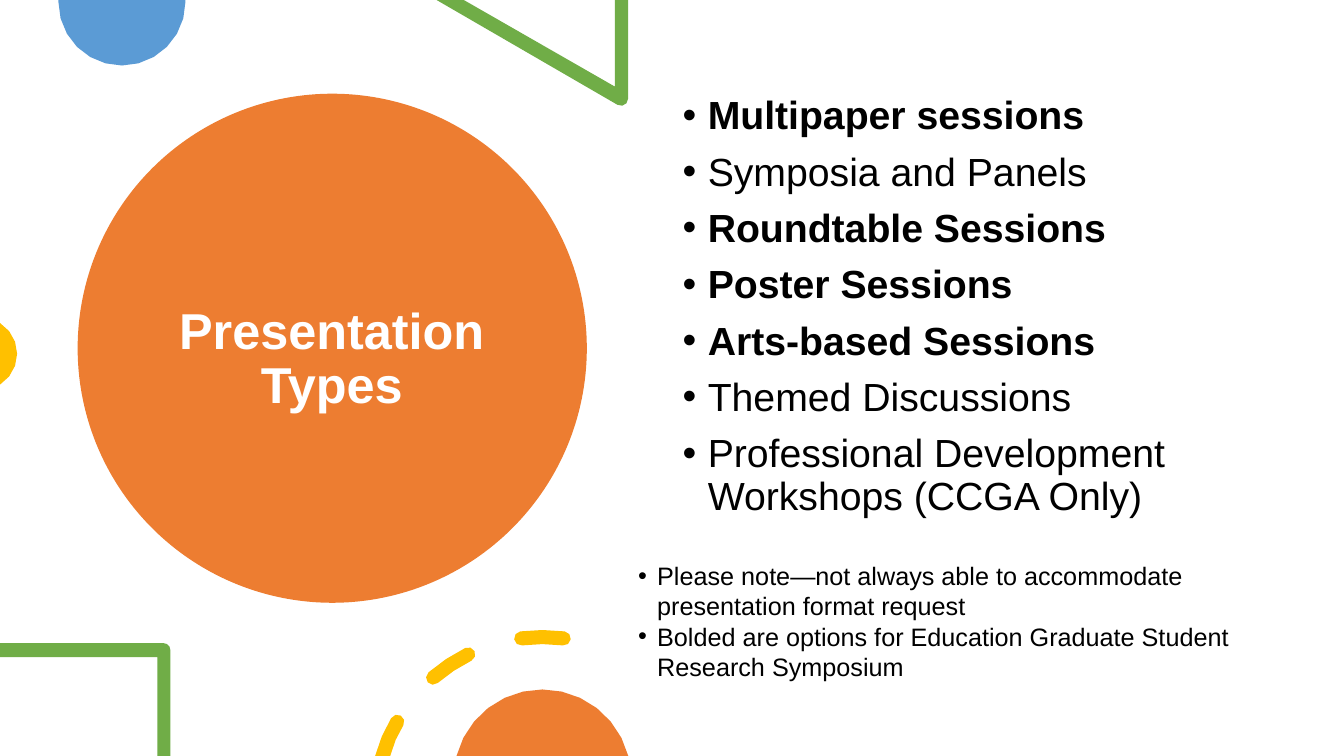
from math import cos, radians, sin

from lxml import etree
from pptx import Presentation
from pptx.dml.color import RGBColor
from pptx.enum.shapes import MSO_SHAPE
from pptx.enum.text import MSO_ANCHOR, MSO_AUTO_SIZE, PP_ALIGN
from pptx.oxml.ns import qn
from pptx.util import Inches, Pt

COLORS = {
    "orange": "ED7D31",
    "blue": "5B9BD5",
    "green": "70AD47",
    "yellow": "FFC000",
    "white": "FFFFFF",
    "black": "000000",
}
COLUMNS, ROWS = 13.33, 7.5
CELL = Inches(1)

deck = Presentation()
deck.slide_width, deck.slide_height = int(COLUMNS * CELL), int(ROWS * CELL)
slide = deck.slides.add_slide(deck.slide_layouts[1])
heading, session_list = slide.placeholders


def arc(column, row, radius, start, end, steps):
    angles = [radians(start + (end - start) * i / steps) for i in range(steps + 1)]
    return [(column + radius * cos(a), row + radius * sin(a)) for a in angles]


def write(frame, entries, size, color, layout, indent=0):
    frame.word_wrap = True
    for number, (wording, bold) in enumerate(entries):
        line = frame.paragraphs[0] if number == 0 else frame.add_paragraph()
        for attribute, value in layout.items():
            setattr(line, attribute, value)
        run = line.add_run()
        run.text = wording
        run.font.color.rgb = RGBColor.from_string(COLORS[color])
        for attribute, value in {"name": "Arial", "size": Pt(size), "bold": bold}.items():
            setattr(run.font, attribute, value)
        if indent:
            properties = line._p.get_or_add_pPr()
            properties.set("marL", str(Inches(indent)))
            properties.set("indent", str(-Inches(indent)))
            etree.SubElement(properties, qn("a:buFont")).set("typeface", "Arial")
            etree.SubElement(properties, qn("a:buChar")).set("char", "•")


disc = slide.shapes.add_shape(
    MSO_SHAPE.OVAL, *[int(n * CELL) for n in (0.77, 0.93, 5.05, 5.05)]
)
heading.element.addprevious(disc.element)
disc.shadow.inherit = False
disc.fill.solid()
disc.fill.fore_color.rgb = RGBColor.from_string(COLORS["orange"])
disc.line.fill.background()

ring, ring_radius, half_width = (5.38, 7.98), 1.66, 0.07
inner, outer = ring_radius - half_width, ring_radius + half_width
dashes = [[
    (3.72, ROWS),
    *arc(*ring, outer, 196.1, 209.8, 2)[1:2],
    *arc(3.94, 7.16, half_width, 209.8, 389.8, 4),
    *arc(*ring, inner, 197.6, 209.8, 2)[1:2],
    (3.87, ROWS),
]]
for start, end in [(229.2, 243.7), (262.7, 277.3)]:
    tail, tip = arc(*ring, ring_radius, start, end, 1)
    dashes.append([
        *arc(*tail, half_width, start + 180, start + 360, 4),
        *arc(*ring, outer, start, end, 2)[1:2],
        *arc(*tip, half_width, end, end + 180, 4),
        *arc(*ring, inner, start, end, 2)[1:2],
    ])

ornaments = [
    ("blue", [[(1.84, 0), *arc(1.21, 0.02, 0.63, 0, 180, 12), (0.58, 0)]]),
    ("green", [[(6.23, 0), (6.1, 0), (6.1, 0.86), (4.6, 0), (4.33, 0),
                *arc(6.16, 0.98, 0.07, 120, 0, 3)]]),
    ("yellow", [arc(-0.19, 3.51, 0.36, -58, 58, 6)]),
    ("green", [[(0, 6.38), *arc(1.62, 6.45, 0.07, 270, 360, 3), (1.69, ROWS),
                (1.56, ROWS), (1.56, 6.52), (0, 6.52)]]),
    ("yellow", dashes),
    ("orange", [arc(5.38, 7.72, 0.88, 194.5, 345.5, 12)]),
]
for number, (color, outlines) in enumerate(ornaments):
    contours = [[(int(x * CELL), int(y * CELL)) for x, y in outline] for outline in outlines]
    builder = slide.shapes.build_freeform(*contours[0][0])
    for contour in contours:
        if contour is not contours[0]:
            builder.move_to(*contour[0])
        builder.add_line_segments(contour[1:], close=True)
    ornament = builder.convert_to_shape()
    ornament.shadow.inherit = False
    ornament.fill.solid()
    ornament.fill.fore_color.rgb = RGBColor.from_string(COLORS[color])
    ornament.line.fill.background()
    if number < 3:
        session_list.element.addprevious(ornament.element)

notice = slide.shapes.add_textbox(0, 0, CELL, CELL)
for holder, area, anchor in [
    (heading, (1.52, 1.35, 3.54, 4.45), MSO_ANCHOR.MIDDLE),
    (session_list, (6.67, 0.9, 5.75, 5.35), MSO_ANCHOR.TOP),
    (notice, (6.23, 5.51, 6.93, 1.31), MSO_ANCHOR.TOP),
]:
    for side, length in zip(("left", "top", "width", "height"), area):
        setattr(holder, side, int(length * CELL))
    holder.text_frame.auto_size = MSO_AUTO_SIZE.NONE
    holder.text_frame.vertical_anchor = anchor
notice.text_frame.auto_size = MSO_AUTO_SIZE.SHAPE_TO_FIT_TEXT

write(heading.text_frame, [("Presentation Types", True)], 36, "white",
      {"alignment": PP_ALIGN.CENTER, "line_spacing": 0.9})

sessions = [
    ("Multipaper sessions", True),
    ("Symposia and Panels", False),
    ("Roundtable Sessions", True),
    ("Poster Sessions", True),
    ("Arts-based Sessions", True),
    ("Themed Discussions", False),
    ("Professional Development Workshops (CCGA Only)", False),
]
write(session_list.text_frame, sessions, 28, "black",
      {"alignment": PP_ALIGN.LEFT, "line_spacing": 0.9, "space_before": Pt(10)}, 0.25)

remarks = [
    ("Please note—not always able to accommodate presentation format request", False),
    ("Bolded are options for Education Graduate Student Research Symposium", False),
]
write(notice.text_frame, remarks, 18, "black", {"alignment": PP_ALIGN.LEFT}, 0.19)

deck.save("out.pptx")
